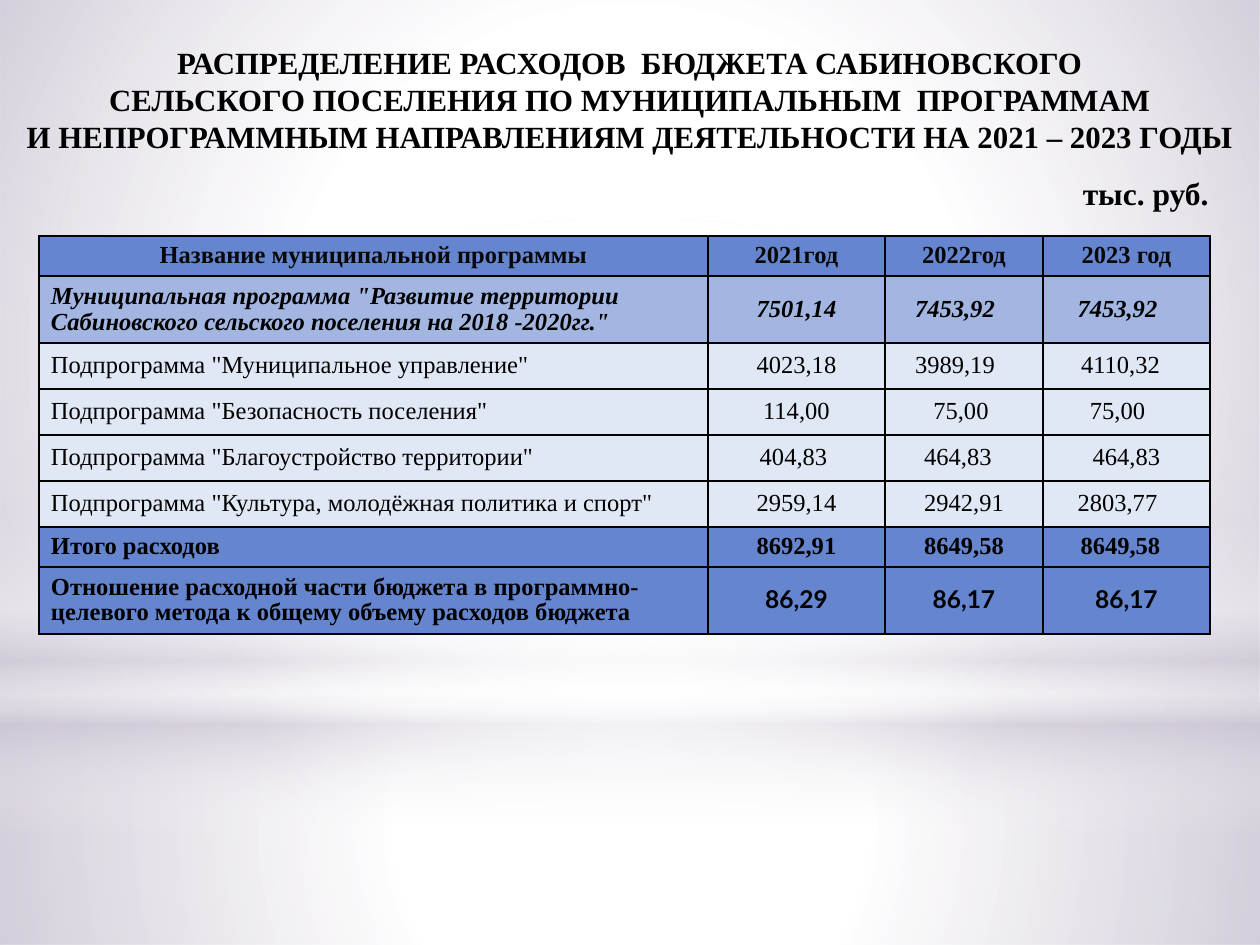
from dataclasses import dataclass

from lxml.etree import SubElement
from pptx import Presentation
from pptx.dml.color import RGBColor
from pptx.enum.shapes import MSO_SHAPE
from pptx.enum.text import MSO_ANCHOR, PP_ALIGN
from pptx.oxml.ns import qn
from pptx.slide import Slide
from pptx.util import Emu, Pt

BLUE, MEDIUM, PALE = "6585CF", "A3B6E2", "E0E7F5"
WHITE, LILAC, BLACK = "FFFFFF", "C9C2D1", "000000"
SPACE = 6

TITLE = [
    "РАСПРЕДЕЛЕНИЕ РАСХОДОВ  БЮДЖЕТА САБИНОВСКОГО",
    "СЕЛЬСКОГО ПОСЕЛЕНИЯ ПО МУНИЦИПАЛЬНЫМ  ПРОГРАММАМ",
    "И НЕПРОГРАММНЫМ НАПРАВЛЕНИЯМ ДЕЯТЕЛЬНОСТИ НА 2021 – 2023 ГОДЫ",
]
COLUMNS = [669, 177, 158, 167]


@dataclass
class Row:
    """One table row: texts, look and the extra right indents of its cells in spaces."""
    texts: list
    height: int = 46
    fill: str = PALE
    bold: bool = False
    italic: bool = False
    color: str = BLACK
    number_font: str = "Times New Roman"
    indents: tuple = (0, 0, 0, 0)
    header: bool = False


ROWS = [
    Row(["Название муниципальной программы", "2021год", "2022год", "2023 год"],
        40, BLUE, True, color="080808", header=True),
    Row(['Муниципальная программа "Развитие территории Сабиновского сельского '
         'поселения на 2018 -2020гг."', "7501,14", "7453,92", "7453,92"],
        67, MEDIUM, True, True, indents=(0, 0, 3, 3)),
    Row(['Подпрограмма "Муниципальное управление"', "4023,18", "3989,19", "4110,32"],
        indents=(0, 0, 3, 2)),
    Row(['Подпрограмма "Безопасность поселения"', "114,00", "75,00", "75,00"],
        indents=(0, 0, 1, 3)),
    Row(['Подпрограмма "Благоустройство территории"', "404,83", "464,83", "464,83"],
        indents=(0, 1, 2, 0)),
    Row(['Подпрограмма "Культура, молодёжная политика и спорт"',
         "2959,14", "2942,91", "2803,77"], indents=(0, 0, 0, 3)),
    Row(["Итого расходов", "8692,91", "8649,58", "8649,58"],
        40, BLUE, True, indents=(0, 0, 0, 2)),
    Row(["Отношение расходной части бюджета в программно-целевого метода "
         "к общему объему расходов бюджета", "86,29", "86,17", "86,17"],
        67, BLUE, True, number_font="Lato"),
]


def px(value):
    """Turn pixels at 126 to the inch into EMU."""
    return Emu(round(value * 914400 / 126))


def rgb(color):
    """Turn a hex string into a colour."""
    return RGBColor.from_string(color)


def add_xml(parent, tag, **attributes):
    """Append a DrawingML child element."""
    return SubElement(parent, qn(f"a:{tag}"), {k: str(v) for k, v in attributes.items()})


@dataclass
class BudgetSlide:
    """Holds the style and the current slide."""
    slide: Slide
    font: str = "Times New Roman"

    def style(self, paragraph, size, align, bold=True, italic=False, color=BLACK, font=None):
        """Format a whole paragraph."""
        paragraph.alignment = align
        paragraph.font.name = font or self.font
        paragraph.font.size = Pt(size)
        paragraph.font.bold = bold
        paragraph.font.italic = italic
        paragraph.font.color.rgb = rgb(color)

    def glow(self, kind, box, stops, angle=None):
        """Add a translucent gradient shape, radial unless an angle is given."""
        shape = self.slide.shapes.add_shape(kind, *map(px, box))
        shape.shadow.inherit = False
        shape.line.fill.background()
        shape.fill.gradient()
        gradient = shape.element.spPr.find(qn("a:gradFill"))
        for child in list(gradient):
            gradient.remove(child)
        stop_list = add_xml(gradient, "gsLst")
        for position, color, alpha in stops:
            stop = add_xml(stop_list, "gs", pos=position * 1000)
            add_xml(add_xml(stop, "srgbClr", val=color), "alpha", val=alpha * 1000)
        if angle is None:
            radial = add_xml(gradient, "path", path="circle")
            add_xml(radial, "fillToRect", l=50000, t=50000, r=50000, b=50000)
        else:
            add_xml(gradient, "lin", ang=angle * 60000, scaled=0)

    def title(self, lines, box):
        """Fill the title placeholder and bring it to the front."""
        title = self.slide.shapes.title
        title.left, title.top, title.width, title.height = map(px, box)
        frame = title.text_frame
        frame.text = "\n".join(lines)
        frame.word_wrap = True
        frame.vertical_anchor = MSO_ANCHOR.MIDDLE
        for paragraph in frame.paragraphs:
            paragraph.line_spacing = 1.0
            self.style(paragraph, 17.6, PP_ALIGN.CENTER)
        title.element.getparent().append(title.element)

    def label(self, text, box):
        """Add a right-aligned text box."""
        frame = self.slide.shapes.add_textbox(*map(px, box)).text_frame
        frame.word_wrap = True
        frame.text = text
        self.style(frame.paragraphs[0], 18, PP_ALIGN.RIGHT)

    def cell(self, cell, row, index):
        """Fill, border and format one table cell."""
        side = 6 if row.header else 12
        cell.margin_left = px(side)
        cell.margin_right = px(side + row.indents[index] * SPACE)
        cell.margin_top = cell.margin_bottom = px(6)
        cell.vertical_anchor = MSO_ANCHOR.MIDDLE
        properties = cell._tc.get_or_add_tcPr()
        for edge in ("lnL", "lnR", "lnT", "lnB"):
            line = add_xml(properties, edge, w=Pt(1))
            add_xml(add_xml(line, "solidFill"), "srgbClr", val=BLACK)
        cell.fill.solid()
        cell.fill.fore_color.rgb = rgb(row.fill)
        cell.text = row.texts[index]
        paragraph = cell.text_frame.paragraphs[0]
        paragraph.line_spacing = 0.95
        is_name = index == 0
        align = PP_ALIGN.LEFT if is_name and not row.header else PP_ALIGN.CENTER
        self.style(paragraph, 14, align, row.bold, row.italic, row.color,
                   self.font if is_name else row.number_font)

    def table(self, left, top, columns, rows):
        """Add the table of expenses."""
        height = sum(row.height for row in rows)
        table = self.slide.shapes.add_table(
            len(rows), len(columns), px(left), px(top), px(sum(columns)), px(height)).table
        for index, width in enumerate(columns):
            table.columns[index].width = px(width)
        for number, row in enumerate(rows):
            table.rows[number].height = px(row.height)
            for index in range(len(columns)):
                self.cell(table.cell(number, index), row, index)


def main():
    """Build and save the presentation."""
    presentation = Presentation()
    presentation.slide_width, presentation.slide_height = px(1260), px(945)
    slide = presentation.slides.add_slide(presentation.slide_layouts[5])
    slide.background.fill.solid()
    slide.background.fill.fore_color.rgb = rgb(WHITE)
    budget = BudgetSlide(slide)
    rectangle = MSO_SHAPE.RECTANGLE
    budget.glow(rectangle, (0, 703, 1260, 242),
                [(0, WHITE, 91), (37, WHITE, 76), (100, LILAC, 79)])
    budget.glow(rectangle, (0, 0, 1260, 703),
                [(0, WHITE, 89), (48, WHITE, 62), (100, LILAC, 79)])
    budget.glow(rectangle, (0, 519, 1260, 315),
                [(0, WHITE, 0), (29, WHITE, 30), (45, LILAC, 40),
                 (55, WHITE, 26), (65, LILAC, 60), (100, WHITE, 0)], 90)
    budget.glow(MSO_SHAPE.OVAL, (0, 220, 1260, 703), [(0, WHITE, 100), (56, WHITE, 0)])
    budget.table(39, 236, COLUMNS, ROWS)
    budget.label("тыс. руб.", (1053, 168, 168, 50))
    budget.title(TITLE, (0, 20, 1260, 158))
    presentation.save("out.pptx")


if __name__ == "__main__":
    main()
